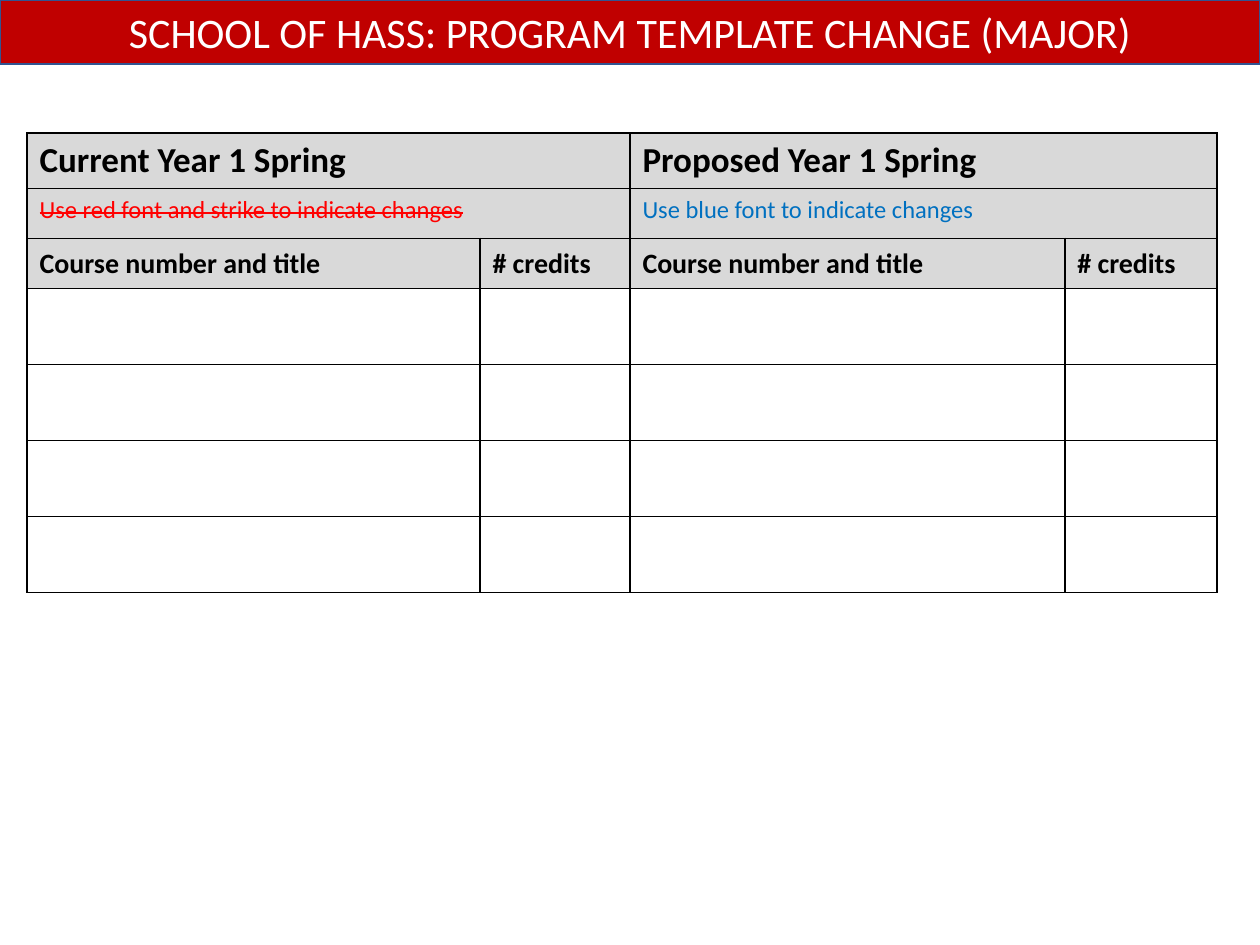
from lxml import etree
from pptx import Presentation, util as u
from pptx.dml.color import RGBColor
from pptx.enum import text
from pptx.oxml import ns

PX = 914400 // 126
FONT = "Calibri"
COLUMNS = [453, 150, 435, 152]
ROWS = [55, 50, 50] + [76] * 4
HEADER_ROWS = 3


def px(length):
    """Turn whole pixels into EMU."""
    return u.Emu(length * PX)


def paint(color_format, value):
    """Set a colour from a hex string."""
    color_format.rgb = RGBColor.from_string(value)


def fill_solid(fill, value):
    """Give a fill one solid colour."""
    fill.solid()
    paint(fill.fore_color, value)


def add_span(para, words, size, color, bold=False, strike=False):
    """Add one formatted run to a paragraph."""
    span = para.add_run()
    span.text = words
    span.font.name = FONT
    span.font.size = u.Pt(size)
    span.font.bold = bold
    paint(span.font.color, color)
    if strike:
        span.font._element.set("strike", "sngStrike")


def add_banner(page, words):
    """Turn the title placeholder into a full-width red banner."""
    box = page.shapes.title
    box.left, box.top, box.width, box.height = map(px, (0, 0, 1260, 64))
    fill_solid(box.fill, "C00000")
    paint(box.line.color, "325491")
    box.line.width = u.Pt(1)
    frame = box.text_frame
    frame.auto_size = text.MSO_AUTO_SIZE.NONE
    frame.vertical_anchor = text.MSO_ANCHOR.MIDDLE
    para = frame.paragraphs[0]
    para.alignment = text.PP_ALIGN.CENTER
    add_span(para, words, 24, "FFFFFF")


def set_borders(cell, color="000000", width=1):
    """Draw a solid line on all four sides of a cell."""
    properties = cell._tc.get_or_add_tcPr()
    for side in ("lnL", "lnR", "lnT", "lnB"):
        line = etree.SubElement(properties, ns.qn(f"a:{side}"), w=str(u.Pt(width)))
        fill = etree.SubElement(line, ns.qn("a:solidFill"))
        etree.SubElement(fill, ns.qn("a:srgbClr"), val=color)


def add_grid(page):
    """Add the bordered table with its grey header rows."""
    frame = page.shapes.add_table(
        len(ROWS), len(COLUMNS), px(27), px(133), px(sum(COLUMNS)), px(sum(ROWS))
    )
    table = frame.table
    table.first_row = table.horz_banding = False
    for column, width in zip(table.columns, COLUMNS):
        column.width = px(width)
    for index, (row, height) in enumerate(zip(table.rows, ROWS)):
        row.height = px(height)
        for cell in row.cells:
            set_borders(cell)
            if index < HEADER_ROWS:
                fill_solid(cell.fill, "D9D9D9")
            else:
                cell.fill.background()
    return table


def add_plan(table, first, heading, hint, hint_color, strike):
    """Fill the headers of one plan, which takes two columns from first."""
    for row in (0, 1):
        table.cell(row, first).merge(table.cell(row, first + 1))
    add_span(table.cell(0, first).text_frame.paragraphs[0], heading, 20, "000000", bold=True)
    add_span(table.cell(1, first).text_frame.paragraphs[0], hint, 14, hint_color, strike=strike)
    for offset, label in enumerate(("Course number and title", "# credits")):
        cell = table.cell(2, first + offset)
        cell.vertical_anchor = text.MSO_ANCHOR.MIDDLE
        add_span(cell.text_frame.paragraphs[0], label, 16, "000000", bold=True)


def main():
    """Build and save the slide."""
    deck = Presentation()
    deck.slide_width, deck.slide_height = px(1260), px(945)
    page = deck.slides.add_slide(deck.slide_layouts[5])
    add_banner(page, "SCHOOL OF HASS: PROGRAM TEMPLATE CHANGE (MAJOR)")
    table = add_grid(page)
    add_plan(table, 0, "Current Year 1 Spring",
             "Use red font and strike to indicate changes", "FF0000", True)
    add_plan(table, 2, "Proposed Year 1 Spring",
             "Use blue font to indicate changes", "0070C0", False)
    deck.save("out.pptx")


if __name__ == "__main__":
    main()
